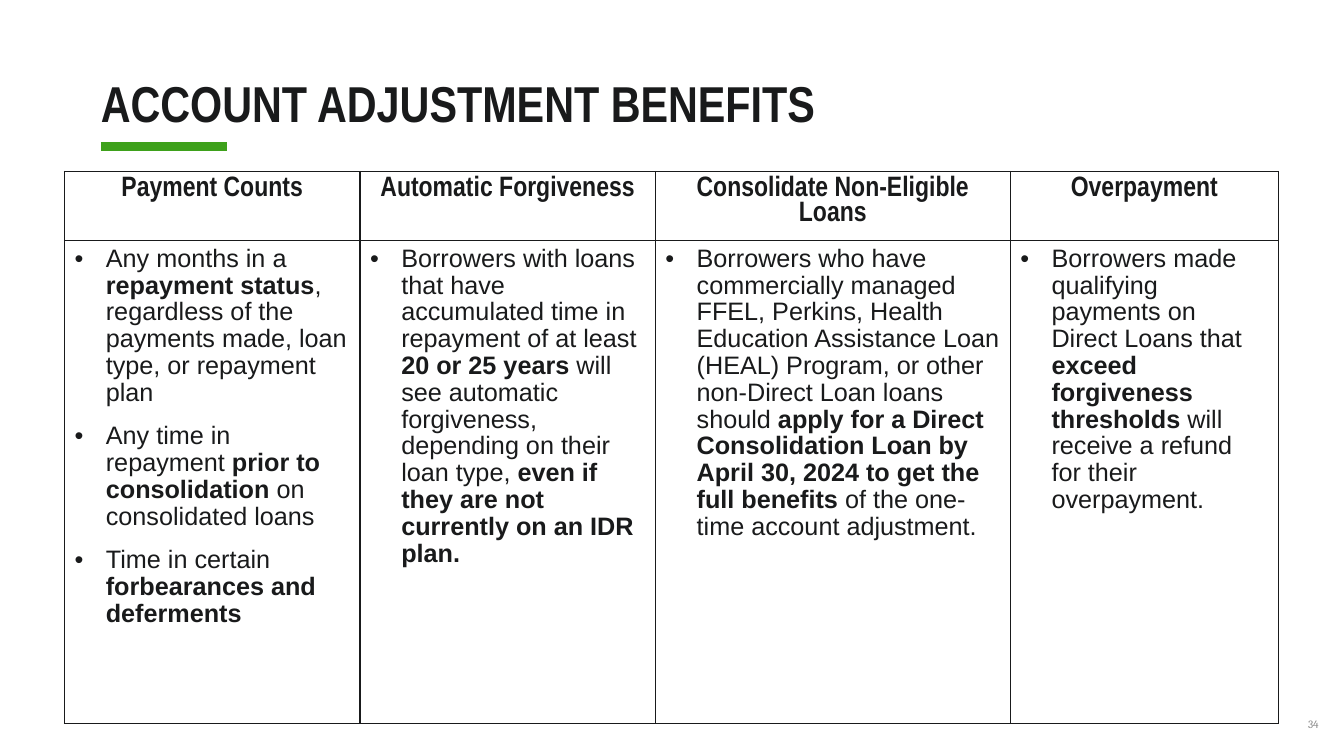
from lxml.etree import SubElement
from pptx import Presentation
from pptx.dml.color import RGBColor
from pptx.enum.shapes import MSO_CONNECTOR
from pptx.enum.text import MSO_ANCHOR, MSO_AUTO_SIZE, PP_ALIGN
from pptx.oxml.ns import qn
from pptx.util import Inches, Pt

INK = {"text": "191A1B", "green": "3EA11B", "gray": "898989"}
WIDTHS = [2.93, 2.93, 3.52, 2.66]
HEIGHTS = [0.69, 4.79]

# Each column: heading, then bullets whose pieces alternate plain and bold.
COLUMNS = [
    ("Payment Counts", [
        ["Any months in a ", "repayment status",
         ", regardless of the payments made, loan type, or repayment plan"],
        ["Any time in repayment ", "prior to consolidation ", "on consolidated loans"],
        ["Time in certain ", "forbearances and deferments"],
    ]),
    ("Automatic Forgiveness", [
        ["Borrowers with loans that have accumulated time in repayment of at least ",
         "20 or 25 years ",
         "will see automatic forgiveness, depending on their loan type, ",
         "even if they are not currently on an IDR plan."],
    ]),
    ("Consolidate Non-Eligible Loans", [
        ["Borrowers who have commercially managed FFEL, Perkins, Health Education "
         "Assistance Loan (HEAL) Program, or other non-Direct Loan loans should ",
         "apply for a Direct Consolidation Loan by April 30, 2024 to get the full benefits ",
         "of the one-time account adjustment."],
    ]),
    ("Overpayment", [
        ["Borrowers made qualifying payments on Direct Loans that ",
         "exceed forgiveness thresholds ",
         "will receive a refund for their overpayment."],
    ]),
]


def style(para, face, size, color="text", bold=None):
    """Set the font of a whole paragraph."""
    font = para.font
    font.name, font.size, font.bold = face, Pt(size), bold
    font.color.rgb = RGBColor.from_string(INK[color])


def trim(frame):
    """Remove the margins of a text frame and fix its size."""
    frame.margin_left = frame.margin_right = frame.margin_top = frame.margin_bottom = 0
    frame.word_wrap = True
    frame.auto_size = MSO_AUTO_SIZE.NONE


deck = Presentation()
deck.slide_width, deck.slide_height = Inches(13.33), Inches(7.5)
slide = deck.slides.add_slide(deck.slide_layouts[5])

# Title and its green rule
title = slide.shapes.title
title.left, title.top, title.width, title.height = map(Inches, (1, 0.32, 10.08, 1))
trim(title.text_frame)
title.text_frame.vertical_anchor = MSO_ANCHOR.BOTTOM
title.text_frame.text = "ACCOUNT ADJUSTMENT BENEFITS"
head = title.text_frame.paragraphs[0]
head.alignment, head.line_spacing = PP_ALIGN.LEFT, 0.85
style(head, "Arial Narrow", 36, bold=True)

rule = slide.shapes.add_connector(
    MSO_CONNECTOR.STRAIGHT, Inches(1), Inches(1.45), Inches(2.25), Inches(1.45))
rule.line.color.rgb = RGBColor.from_string(INK["green"])
rule.line.width = Pt(6.25)
SubElement(rule.element.spPr, qn("a:effectLst"))

# Table of benefits
table = slide.shapes.add_table(
    len(HEIGHTS), len(WIDTHS), Inches(0.64), Inches(1.7),
    Inches(sum(WIDTHS)), Inches(sum(HEIGHTS))).table
table.first_row = table.horz_banding = False
for row, height in zip(table.rows, HEIGHTS):
    row.height = Inches(height)

for col, (name, points) in enumerate(COLUMNS):
    table.columns[col].width = Inches(WIDTHS[col])
    top, body = table.cell(0, col), table.cell(1, col)

    for cell in (top, body):
        props = cell._tc.get_or_add_tcPr()
        for side in ("a:lnL", "a:lnR", "a:lnT", "a:lnB"):
            edge = SubElement(props, qn(side), w=str(Pt(1)))
            SubElement(SubElement(edge, qn("a:solidFill")), qn("a:srgbClr"), val=INK["text"])
        cell.fill.background()

    top.text = name
    para = top.text_frame.paragraphs[0]
    para.alignment, para.line_spacing = PP_ALIGN.CENTER, 0.95
    style(para, "Arial Narrow", 20, bold=True)

    for num, pieces in enumerate(points):
        frame = body.text_frame
        para = frame.add_paragraph() if num else frame.paragraphs[0]
        para.line_spacing = 0.95
        if num:
            para.space_before = Pt(12)
        props = para._p.get_or_add_pPr()
        props.set("marL", str(Inches(0.31)))
        props.set("indent", str(-Inches(0.31)))
        tint = SubElement(props, qn("a:buClr"))
        SubElement(tint, qn("a:srgbClr"), val=INK["text"])
        SubElement(props, qn("a:buFont"), typeface="Arial")
        SubElement(props, qn("a:buChar"), char="•")
        style(para, "Arial", 18)
        for step, piece in enumerate(pieces):
            run = para.add_run()
            run.text = piece
            run.font.bold = step % 2 == 1

# Page number
page = slide.shapes.add_textbox(Inches(12.78), Inches(7.12), Inches(0.3), Inches(0.13))
trim(page.text_frame)
page.text_frame.text = "34"
para = page.text_frame.paragraphs[0]
para.alignment = PP_ALIGN.RIGHT
style(para, "Cambria", 8, "gray")

deck.save("out.pptx")
